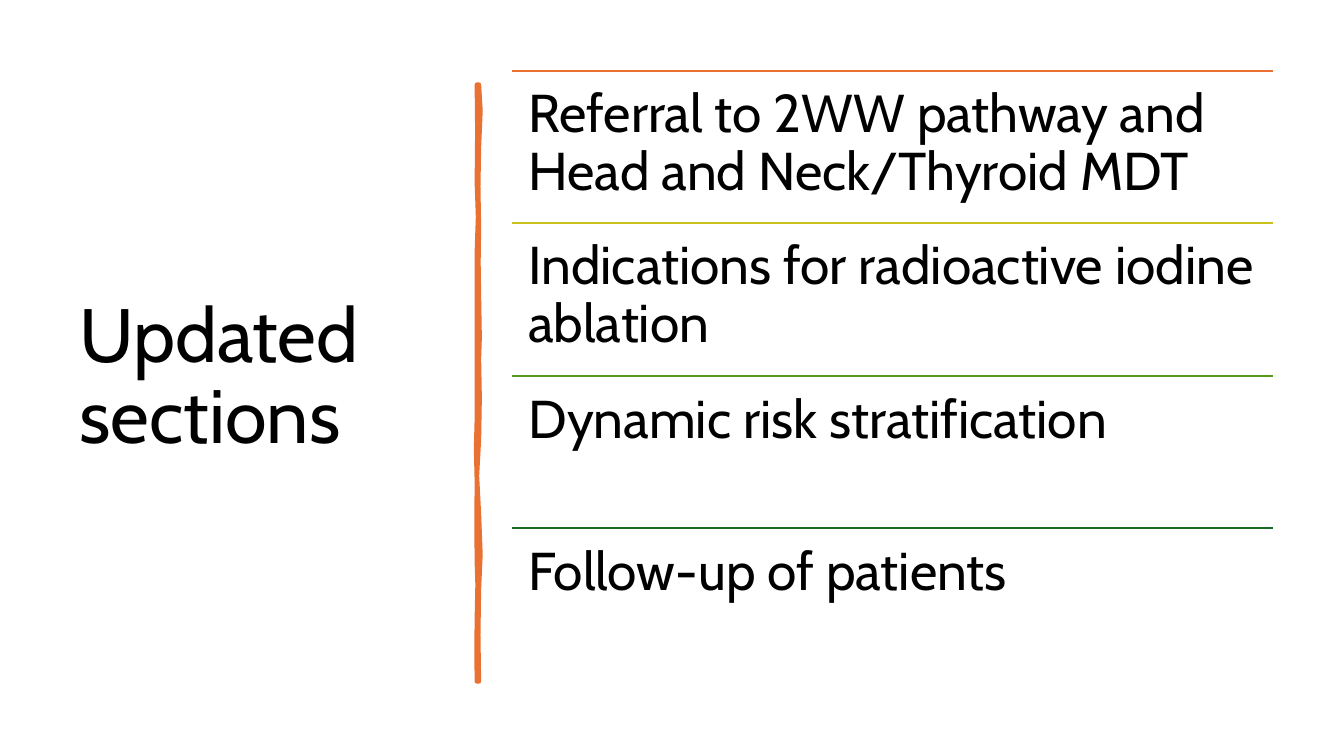
from lxml.etree import SubElement
from pptx import Presentation
from pptx.dml.color import RGBColor as RGB
from pptx.enum.shapes import MSO_CONNECTOR as CONN
from pptx.enum.text import MSO_ANCHOR as ANCHOR
from pptx.oxml.ns import qn
from pptx.util import Pt

PX = 9144  # 100 px to the inch
FONT = "Cabin"
C = {"text": "000000", "orange": "E97132", "yellow": "CBC11E",
     "green": "56991D", "forest": "196B24"}
SECTIONS = [
    ("Referral to 2WW pathway and Head and Neck/Thyroid MDT", "orange"),
    ("Indications for radioactive iodine ablation", "yellow"),
    ("Dynamic risk stratification", "green"),
    ("Follow-up of patients", "forest"),
]
# Brush stroke edges: (tenths of a px across, px down)
RIGHT_EDGE = [(30, 0), (45, 26), (30, 62), (23, 101), (30, 142), (25, 176),
              (30, 210), (37, 251), (30, 272), (37, 311), (30, 352), (10, 388),
              (30, 426), (45, 466), (30, 500), (23, 546), (30, 592)]
LEFT_EDGE = [(10, 592), (7, 561), (10, 529), (17, 496), (10, 473), (7, 436),
             (10, 393), (2, 362), (10, 331), (10, 251), (10, 166), (22, 131),
             (10, 97), (15, 46), (10, 0)]


def add_text(s, text, x, y, w, h, size=38, inset=16, anchor=ANCHOR.TOP):
    tf = s.shapes.add_textbox(x * PX, y * PX, w * PX, h * PX).text_frame
    tf.word_wrap = True
    tf.vertical_anchor = anchor
    tf.margin_left = tf.margin_right = inset * PX
    tf.margin_top = tf.margin_bottom = inset * PX
    p = tf.paragraphs[0]
    p.line_spacing = 0.9
    r = p.add_run()
    r.text = text
    r.font.name, r.font.size = FONT, Pt(size)
    r.font.color.rgb = RGB.from_string(C["text"])


def add_rule(s, x, y, w, color):
    ln = s.shapes.add_connector(CONN.STRAIGHT, x * PX, y * PX, (x + w) * PX, y * PX)
    ln.line.color.rgb = RGB.from_string(C[color])
    ln.line.width = Pt(1.5)
    SubElement(ln._element.spPr, qn("a:effectLst"))


def add_brush_stroke(s, x, y):
    points = [(dx, dy * 10) for dx, dy in RIGHT_EDGE + LEFT_EDGE]
    fb = s.shapes.build_freeform(*points[0], scale=PX / 10)
    fb.add_line_segments(points[1:], close=True)
    sp = fb.convert_to_shape(x * PX, y * PX)
    sp.shadow.inherit = False
    sp.fill.solid()
    sp.fill.fore_color.rgb = sp.line.color.rgb = RGB.from_string(C["orange"])
    sp.line.width = Pt(3.25)


def add_sections(s, x, y, w, h):
    row_h = h // len(SECTIONS)
    for i, (text, color) in enumerate(SECTIONS):
        top = y + i * h // len(SECTIONS)
        add_rule(s, x, top, w, color)
        add_text(s, text, x, top, w, row_h)


def main():
    prs = Presentation()
    prs.slide_width, prs.slide_height = 1333 * PX, 750 * PX
    s = prs.slides.add_slide(prs.slide_layouts[6])
    # Title
    add_text(s, "Updated sections", 69, 70, 374, 611, size=54, inset=10,
             anchor=ANCHOR.MIDDLE)
    # Divider
    add_brush_stroke(s, 472, 84)
    # Section list
    add_sections(s, 508, 70, 755, 606)
    prs.save("out.pptx")


if __name__ == "__main__":
    main()
